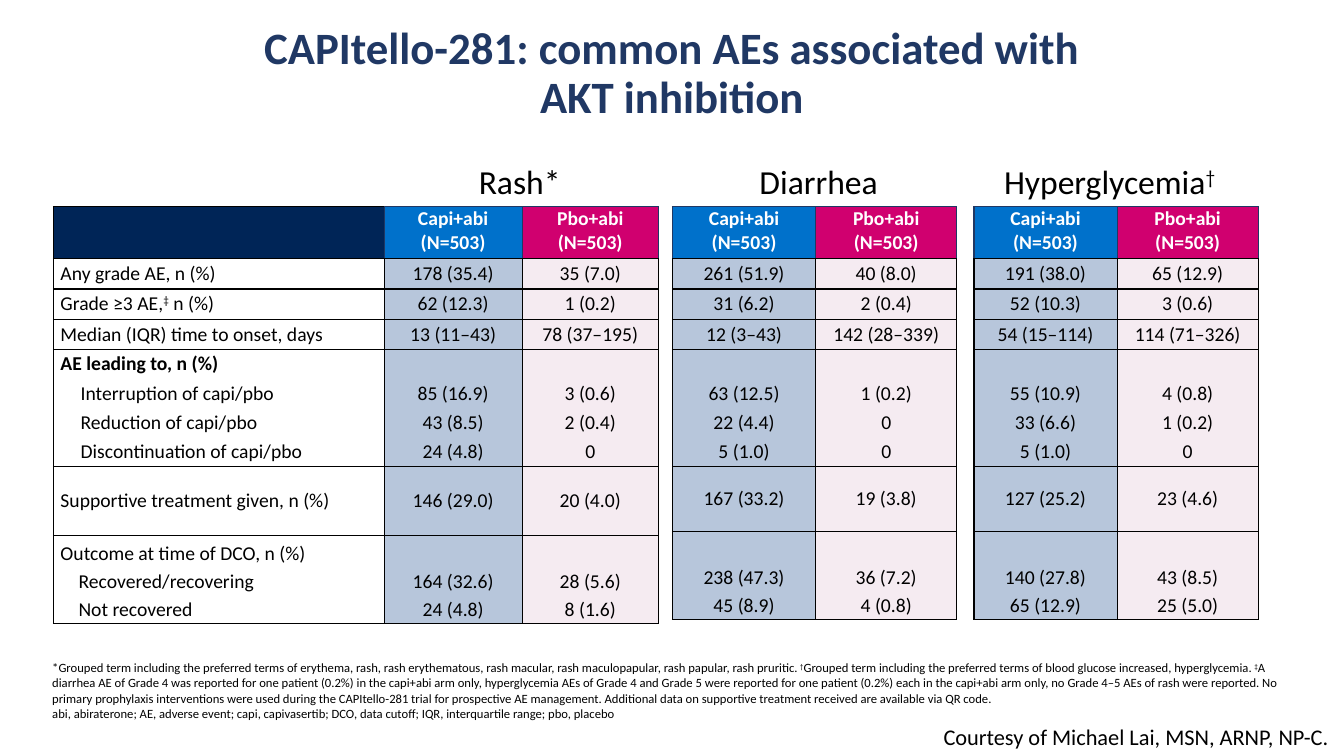
from itertools import groupby

from lxml.etree import SubElement
from pptx import Presentation
from pptx.dml.color import RGBColor
from pptx.enum.text import MSO_ANCHOR as Anchor, PP_ALIGN as Align
from pptx.oxml.ns import qn
from pptx.util import Inches, Pt

U = Inches(0.01)  # grid step; every length below is a number of steps
W, H = 1333, 750
BLACK, WHITE, NAVY = "000000", "FFFFFF", "203864"
rgb = RGBColor.from_string


def write(tf, text, size=14, color=BLACK, bold=False, align=Align.LEFT,
          new=False, after=0, indent=0, spacing=None):
    """Write one paragraph; newlines become line breaks, daggers superscripts."""
    p = tf.add_paragraph() if new else tf.paragraphs[0]
    p.alignment, p.space_after, p.line_spacing = align, Pt(after), spacing
    if indent:
        p._p.get_or_add_pPr().set("marL", str(indent * U))
    if not text:
        SubElement(p._p, qn("a:endParaRPr"), sz=str(size * 100))
    for mark, chars in groupby(text, lambda ch: ch if ch in "†‡\n" else ""):
        if mark == "\n":
            p.add_line_break()
            continue
        r = p.add_run()
        r.text = "".join(chars)
        r.font.name, r.font.size, r.font.bold = "Calibri", Pt(size), bold
        r.font.color.rgb = rgb(color)
        if mark:
            r.font._element.set("baseline", "30000")


prs = Presentation()
prs.slide_width, prs.slide_height = W * U, H * U
s = prs.slides.add_slide(prs.slide_layouts[6])

footnote = (
    "*Grouped term including the preferred terms of erythema, rash, rash erythematous, "
    "rash macular, rash maculopapular, rash papular, rash pruritic. †Grouped term including "
    "the preferred terms of blood glucose increased, hyperglycemia. ‡A diarrhea AE of Grade 4 "
    "was reported for one patient (0.2%) in the capi+abi arm only, hyperglycemia AEs of "
    "Grade 4 and Grade 5 were reported for one patient (0.2%) each in the capi+abi arm only, "
    "no Grade 4–5 AEs of rash were reported. No primary prophylaxis interventions were used "
    "during the CAPItello-281 trial for prospective AE management. Additional data on "
    "supportive treatment received are available via QR code.\n"
    "abi, abiraterone; AE, adverse event; capi, capivasertib; DCO, data cutoff; "
    "IQR, interquartile range; pbo, placebo")

# left, top, width, height, anchor, wrap, text, format
texts = [
    (0, 35, W, 78, Anchor.MIDDLE, True,
     "CAPItello-281: common AEs associated with\nAKT inhibition",
     dict(size=32, color=NAVY, bold=True, align=Align.CENTER, spacing=0.9)),
    (465, 155, 165, 50, Anchor.TOP, True, "Rash*", dict(size=24)),
    (684, 155, 256, 50, Anchor.TOP, True, "Diarrhea", dict(size=24, align=Align.CENTER)),
    (986, 155, 256, 50, Anchor.TOP, True, "Hyperglycemia†", dict(size=24)),
    (42, 649, 1266, 71, Anchor.BOTTOM, True, footnote, dict(size=9)),
    (926, 713, 407, 37, Anchor.TOP, False,
     "Courtesy of Michael Lai, MSN, ARNP, NP-C.", dict(size=16)),
]
for x, y, w, h, anchor, wrap, text, fmt in texts:
    tf = s.shapes.add_textbox(x * U, y * U, w * U, h * U).text_frame
    tf.word_wrap, tf.vertical_anchor = wrap, anchor
    write(tf, text, **fmt)

# Columns run top to bottom, one entry per table row; "|" parts paragraphs
row_names = [
    "", "Any grade AE, n (%)", "Grade ≥3 AE,‡ n (%)", "Median (IQR) time to onset, days",
    "AE leading to, n (%)", "Interruption of capi/pbo", "Reduction of capi/pbo",
    "Discontinuation of capi/pbo", "Supportive treatment given, n (%)",
    "Outcome at time of DCO, n (%)|Recovered/recovering|Not recovered"]
capi, pbo = "Capi+abi|(N=503)", "Pbo+abi|(N=503)"
rash = [
    [capi, "178 (35.4)", "62 (12.3)", "13 (11–43)", "", "85 (16.9)", "43 (8.5)",
     "24 (4.8)", "146 (29.0)", "164 (32.6)|24 (4.8)"],
    [pbo, "35 (7.0)", "1 (0.2)", "78 (37–195)", "", "3 (0.6)", "2 (0.4)",
     "0", "20 (4.0)", "28 (5.6)|8 (1.6)"]]
diarrhea = [
    [capi, "261 (51.9)", "31 (6.2)", "12 (3–43)", "", "63 (12.5)", "22 (4.4)",
     "5 (1.0)", "167 (33.2)", "238 (47.3)|45 (8.9)"],
    [pbo, "40 (8.0)", "2 (0.4)", "142 (28–339)", "", "1 (0.2)", "0",
     "0", "19 (3.8)", "36 (7.2)|4 (0.8)"]]
hyperglycemia = [
    [capi, "191 (38.0)", "52 (10.3)", "54 (15–114)", "", "55 (10.9)", "33 (6.6)",
     "5 (1.0)", "127 (25.2)", "140 (27.8)|65 (12.9)"],
    [pbo, "65 (12.9)", "3 (0.6)", "114 (71–326)", "", "4 (0.8)", "1 (0.2)",
     "0", "23 (4.6)", "43 (8.5)|25 (5.0)"]]

fills = [("002557", WHITE), ("0071CB", "B7C6DB"), ("D0006F", "F5EBF1")]  # header, body
GROUP_TOP, GROUP_END, LAST = 4, 7, 9  # "AE leading to" rows share one frame

# left, column widths, height of the supportive treatment row, columns
tables = [
    (53, [328, 137, 135], 69, [row_names] + rash),
    (667, [142, 140], 65, diarrhea),
    (966, [142, 140], 65, hyperglycemia),
]
for left, widths, support_height, columns in tables:
    heights = [51] + [30] * 3 + [29] * 4 + [support_height, 87]
    table = s.shapes.add_table(len(heights), len(widths), left * U, 205 * U,
                               sum(widths) * U, sum(heights) * U).table
    table.first_row = table.horz_banding = False
    for row, height in zip(table.rows, heights):
        row.height = height * U
    for c, (width, column) in enumerate(zip(widths, columns)):
        table.columns[c].width = width * U
        kind = c + 3 - len(widths) if len(widths) == 2 else c
        for i, text in enumerate(column):
            cell = table.cell(i, c)
            header, names = i == 0, kind == 0
            side = 10 if header else 7
            cell.margin_left = cell.margin_right = side * U
            cell.margin_top = 0
            cell.margin_bottom = (5 if header else 2 if i == LAST else 0) * U
            cell.vertical_anchor = Anchor.BOTTOM if i == LAST else Anchor.MIDDLE
            for n, line in enumerate(text.split("|")):
                nested = names and (GROUP_TOP < i <= GROUP_END or n > 0)
                write(cell.text_frame, line, new=n > 0, after=0 if header else 3,
                      color=WHITE if header else BLACK,
                      bold=header or (names and i == GROUP_TOP),
                      align=Align.LEFT if names else Align.CENTER,
                      indent=(18 if i == LAST else 20) if nested else 0)
            edge = NAVY if header and not names else BLACK
            borders = {
                "L": edge,
                "R": NAVY if header else BLACK,
                "T": None if GROUP_TOP < i <= GROUP_END else edge,
                "B": None if GROUP_TOP <= i < GROUP_END else BLACK}
            for name, color in borders.items():
                ln = SubElement(cell._tc.get_or_add_tcPr(), qn("a:ln" + name), w=str(Pt(1)))
                if color:
                    SubElement(SubElement(ln, qn("a:solidFill")), qn("a:srgbClr"), val=color)
                else:
                    SubElement(ln, qn("a:noFill"))
            cell.fill.solid()
            cell.fill.fore_color.rgb = rgb(fills[kind][0 if header else 1])

prs.save("out.pptx")
